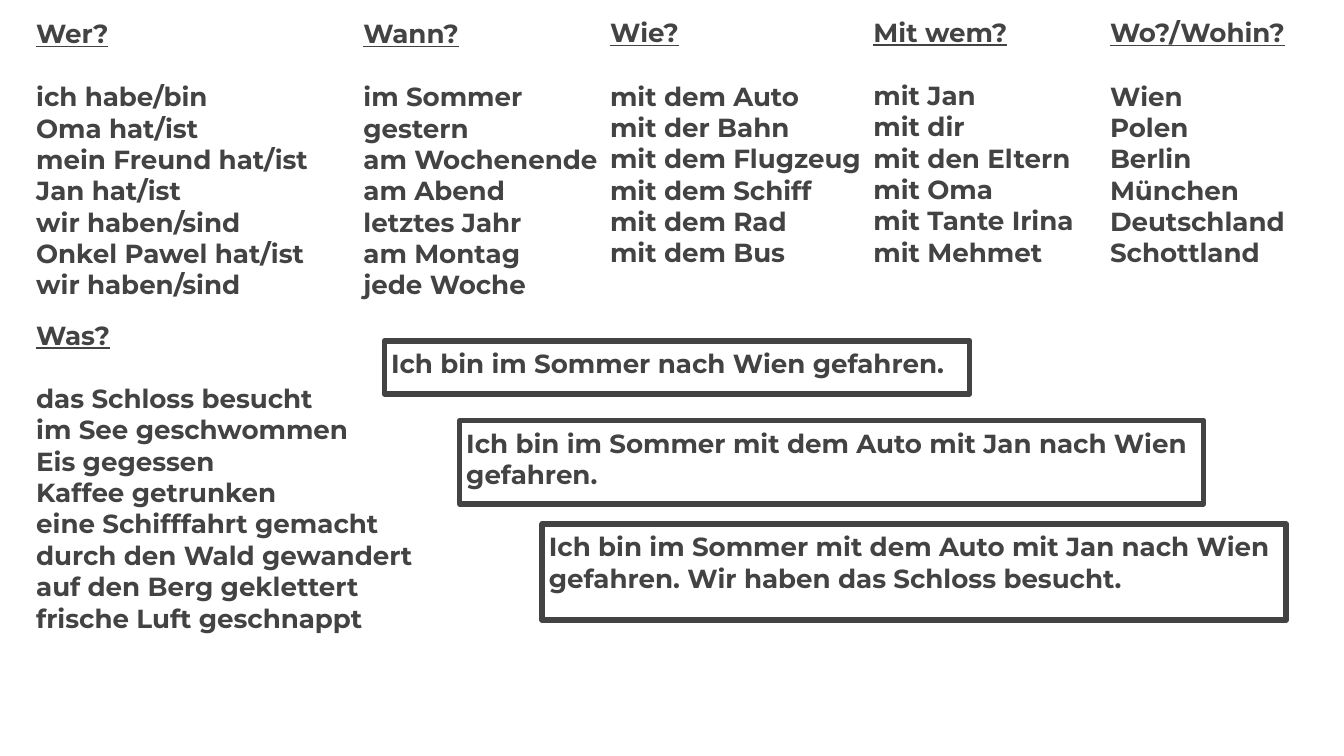
from pptx import Presentation
from pptx.dml.color import RGBColor
from pptx.enum.shapes import MSO_SHAPE
from pptx.enum.text import MSO_ANCHOR, PP_ALIGN
from pptx.util import Inches, Pt

INK = "434343"
FONT = "Montserrat"
TEXT_SIZE = 28
HEADING_GAP = 34  # one line of text, in points

# left, top, width, height, question, answers
WORD_LISTS = [
    (0.44, 0.16, 4.69, 4.41, "Wer?",
     ["ich habe/bin", "Oma hat/ist", "mein Freund hat/ist", "Jan hat/ist",
      "wir haben/sind", "Onkel Pawel hat/ist", "wir haben/sind"]),
    (5.31, 0.16, 3.78, 4.57, "Wann?",
     ["im Sommer", "gestern", "am Wochenende", "am Abend",
      "letztes Jahr", "am Montag", "jede Woche"]),
    (8.98, 0.15, 4.09, 4.14, "Wie?",
     ["mit dem Auto", "mit der Bahn", "mit dem Flugzeug",
      "mit dem Schiff", "mit dem Rad", "mit dem Bus"]),
    (12.9, 0.14, 3.22, 4.14, "Mit wem?",
     ["mit Jan", "mit dir", "mit den Eltern",
      "mit Oma", "mit Tante Irina", "mit Mehmet"]),
    (16.42, 0.15, 2.92, 4.14, "Wo?/Wohin?",
     ["Wien", "Polen", "Berlin", "München", "Deutschland", "Schottland"]),
    (0.44, 4.65, 7.86, 4.95, "Was?",
     ["das Schloss besucht", "im See geschwommen", "Eis gegessen",
      "Kaffee getrunken", "eine Schifffahrt gemacht",
      "durch den Wald gewandert", "auf den Berg geklettert",
      "frische Luft geschnappt"]),
]

# left, top, width, height, sentence
EXAMPLES = [
    (5.72, 5.07, 8.71, 0.79, "Ich bin im Sommer nach Wien gefahren."),
    (6.84, 6.26, 11.07, 1.24,
     "Ich bin im Sommer mit dem Auto mit Jan nach Wien gefahren."),
    (8.07, 7.8, 11.07, 1.43,
     "Ich bin im Sommer mit dem Auto mit Jan nach Wien gefahren. "
     "Wir haben das Schloss besucht."),
]


def color(hex_string):
    return RGBColor.from_string(hex_string)


def prepare_frame(shape):
    """Set wrapping, top anchor and equal margins, and return the text frame."""
    frame = shape.text_frame
    frame.word_wrap = True
    frame.vertical_anchor = MSO_ANCHOR.TOP
    frame.margin_left = frame.margin_right = Inches(0.1)
    frame.margin_top = frame.margin_bottom = Inches(0.1)
    return frame


def add_bold_run(paragraph, text, underline=False):
    paragraph.alignment = PP_ALIGN.LEFT
    run = paragraph.add_run()
    run.text = text
    run.font.name = FONT
    run.font.size = Pt(TEXT_SIZE)
    run.font.bold = True
    run.font.underline = underline
    run.font.color.rgb = color(INK)


def add_word_list(slide, left, top, width, height, question, answers):
    box = slide.shapes.add_textbox(
        Inches(left), Inches(top), Inches(width), Inches(height))
    frame = prepare_frame(box)
    heading = frame.paragraphs[0]
    heading.space_after = Pt(HEADING_GAP)
    add_bold_run(heading, question, underline=True)
    for answer in answers:
        add_bold_run(frame.add_paragraph(), answer)


def add_example(slide, left, top, width, height, sentence):
    box = slide.shapes.add_shape(
        MSO_SHAPE.RECTANGLE,
        Inches(left), Inches(top), Inches(width), Inches(height))
    box.shadow.inherit = False
    box.fill.background()
    box.line.color.rgb = color(INK)
    box.line.width = Pt(6)
    add_bold_run(prepare_frame(box).paragraphs[0], sentence)


def main():
    presentation = Presentation()
    presentation.slide_width = Inches(20)
    presentation.slide_height = Inches(11.25)
    slide = presentation.slides.add_slide(presentation.slide_layouts[6])
    for word_list in WORD_LISTS:
        add_word_list(slide, *word_list)
    for example in EXAMPLES:
        add_example(slide, *example)
    presentation.save("out.pptx")


if __name__ == "__main__":
    main()
